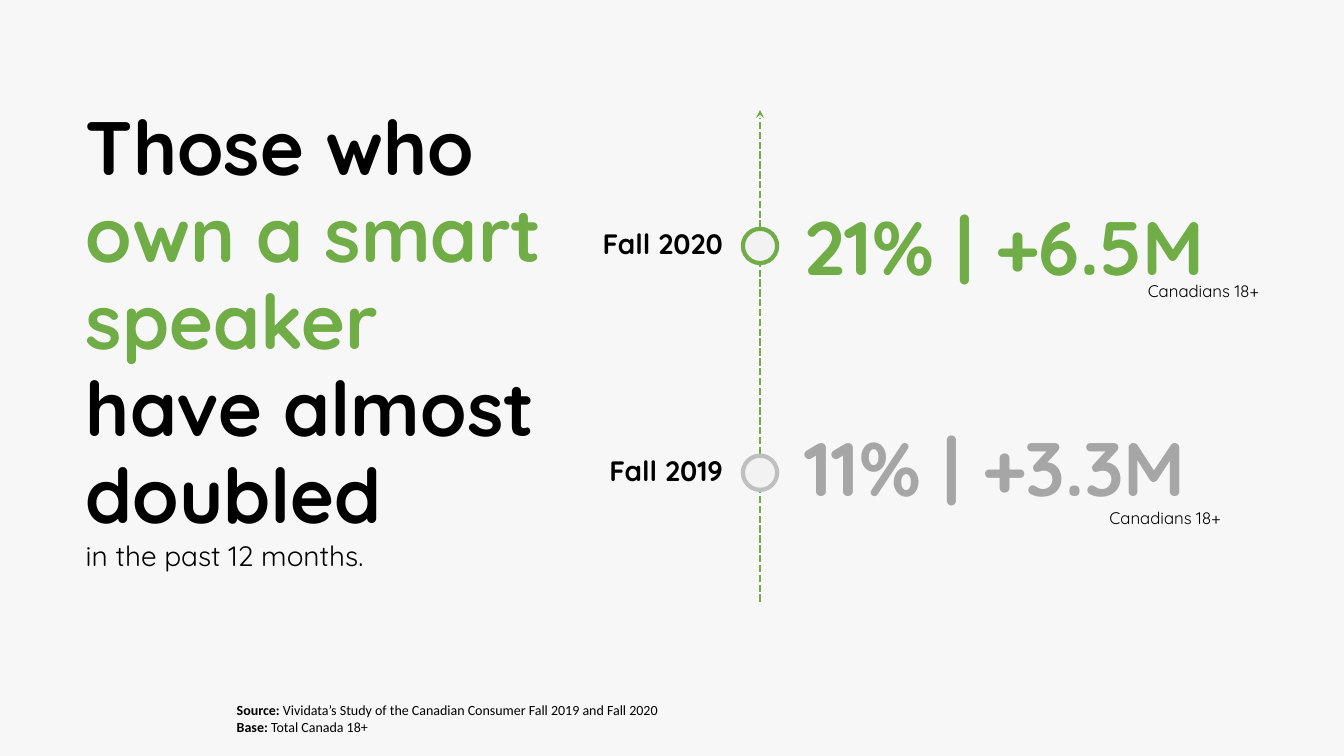
from lxml import etree
from pptx import Presentation
from pptx.dml.color import RGBColor
from pptx.enum.dml import MSO_LINE
from pptx.enum.shapes import MSO_CONNECTOR, MSO_SHAPE
from pptx.enum.text import MSO_ANCHOR, MSO_AUTO_SIZE, PP_ALIGN
from pptx.oxml.ns import qn
from pptx.util import Inches, Pt

LEFT, RIGHT = PP_ALIGN.LEFT, PP_ALIGN.RIGHT
TOP, MIDDLE = MSO_ANCHOR.TOP, MSO_ANCHOR.MIDDLE
NO_AUTOFIT = MSO_AUTO_SIZE.NONE
DASH = MSO_LINE.SQUARE_DOT
ELLIPSE, STRAIGHT = MSO_SHAPE.OVAL, MSO_CONNECTOR.STRAIGHT
TITLE_ONLY = 5

HEADING_FONT, BODY_FONT = "Quicksand", "Calibri"
GREEN, GREY, RING_GREY, BLACK = "70AD47", "A6A6A6", "BFBFBF", "000000"
BACKGROUND, MARKER_FILL = "F7F7F7", "F2F2F2"
LINE_BREAK = "\n"

AXIS_X = 56.55
MARKER_WIDTH, MARKER_HEIGHT = 2.55, 4.53
FIRST_ROW, ROW_STEP = 30.27, 30

# label, figures, text colour, ring colour, top of figures, left of note
MILESTONES = [
    ("Fall 2020", "21% | +6.5M", GREEN, GREEN, 25.73, 81.45),
    ("Fall 2019", "11% | +3.3M", GREY, RING_GREY, 55.07, 78.6),
]


def color(hex_string):
    return RGBColor.from_string(hex_string)


def set_attributes(target, values):
    for name, value in values.items():
        setattr(target, name, value)


class SlideBuilder:
    """Draws on one slide; every place and length is a percentage of the slide."""

    def __init__(self, presentation):
        self.width = presentation.slide_width
        self.height = presentation.slide_height
        self.slide = presentation.slides.add_slide(presentation.slide_layouts[TITLE_ONLY])
        fill = self.slide.background.fill
        fill.solid()
        fill.fore_color.rgb = color(BACKGROUND)

    def x(self, share):
        return int(self.width * share / 100)

    def y(self, share):
        return int(self.height * share / 100)

    def box(self, left, top, width, height):
        return self.x(left), self.y(top), self.x(width), self.y(height)

    def fill_text(self, shape, paragraphs, font=HEADING_FONT, anchor=TOP, **paragraph_format):
        """Each paragraph is a list of (text, size, colour, bold) runs or line breaks."""
        frame = shape.text_frame
        set_attributes(frame, {"word_wrap": True, "auto_size": NO_AUTOFIT,
                               "vertical_anchor": anchor})
        for index, runs in enumerate(paragraphs):
            paragraph = frame.add_paragraph() if index else frame.paragraphs[0]
            set_attributes(paragraph, paragraph_format)
            for item in runs:
                if item == LINE_BREAK:
                    paragraph.add_line_break()
                    continue
                text, size, hex_string, bold = item
                run = paragraph.add_run()
                run.text = text
                set_attributes(run.font, {"name": font, "size": Pt(size), "bold": bold})
                run.font.color.rgb = color(hex_string)

    def title(self, place, runs, **text_format):
        title = self.slide.shapes.title
        names = ("left", "top", "width", "height")
        set_attributes(title, dict(zip(names, self.box(*place))))
        self.fill_text(title, [runs], **text_format)

    def text(self, place, paragraphs, **text_format):
        shape = self.slide.shapes.add_textbox(*self.box(*place))
        self.fill_text(shape, paragraphs, **text_format)

    def dashed_arrow(self, start, end, hex_string, width):
        connector = self.slide.shapes.add_connector(
            STRAIGHT, self.x(start[0]), self.y(start[1]), self.x(end[0]), self.y(end[1]))
        set_attributes(connector.line, {"width": Pt(width), "dash_style": DASH})
        connector.line.color.rgb = color(hex_string)
        properties = connector.element.spPr
        etree.SubElement(properties.find(qn("a:ln")), qn("a:tailEnd"), type="stealth")
        etree.SubElement(properties, qn("a:effectLst"))

    def marker(self, place, ring):
        shape = self.slide.shapes.add_shape(ELLIPSE, *self.box(*place))
        shape.shadow.inherit = False
        shape.fill.solid()
        shape.fill.fore_color.rgb = color(MARKER_FILL)
        shape.line.color.rgb = color(ring)
        shape.line.width = Pt(3)


def main():
    presentation = Presentation()
    set_attributes(presentation, {"slide_width": Inches(13.33), "slide_height": Inches(7.5)})
    builder = SlideBuilder(presentation)

    builder.title((5.63, 11.07, 39.15, 67.6), [
        ("Those who ", 54, BLACK, True),
        ("own a smart speaker", 54, GREEN, True), LINE_BREAK,
        ("have almost doubled ", 54, BLACK, True), LINE_BREAK,
        ("in the past 12 months.", 20, BLACK, False),
    ], anchor=MIDDLE, alignment=LEFT, line_spacing=0.96, space_after=Pt(6))

    builder.dashed_arrow((AXIS_X, 79.6), (AXIS_X, 14.53), GREEN, 1.75)

    for index, (label, figures, hex_string, ring, top, note_left) in enumerate(MILESTONES):
        row = FIRST_ROW + index * ROW_STEP
        builder.marker((AXIS_X - MARKER_WIDTH / 2, row, MARKER_WIDTH, MARKER_HEIGHT), ring)
        builder.text((59.1, top, 37.43, 16.67), [[(figures, 54, hex_string, True)]],
                     space_after=Pt(6))
        builder.text((38.55, row - 0.94, 15.98, 6.67), [[(label, 20, BLACK, True)]],
                     alignment=RIGHT, space_after=Pt(6))
        builder.text((note_left, row + 6.26, 12.98, 4), [[("Canadians 18+", 12, BLACK, False)]],
                     alignment=RIGHT)

    builder.text((16.88, 92.13, 37.05, 5.87), [
        [("Source: ", 10, BLACK, True),
         ("Vividata’s Study of the Canadian Consumer Fall 2019 and Fall 2020", 10, BLACK, False)],
        [("Base: ", 10, BLACK, True), ("Total Canada 18+", 10, BLACK, False)],
    ], font=BODY_FONT)

    presentation.save("out.pptx")


if __name__ == "__main__":
    main()
